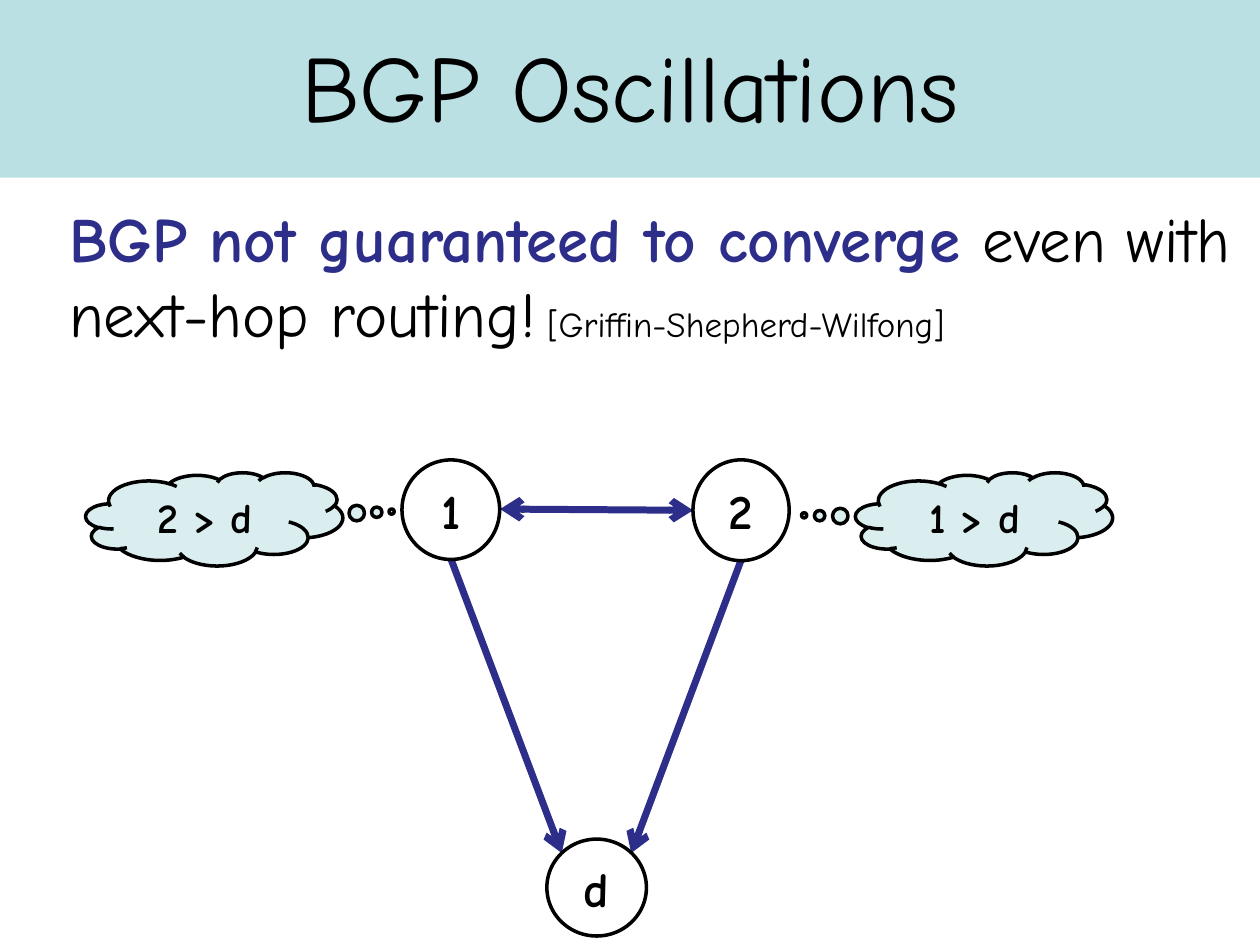
"""Build the BGP Oscillations slide: two nodes that prefer each other over d."""
import pptx
import pptx.chart.data
import pptx.dml.color
import pptx.enum.shapes
import pptx.enum.text
import pptx.oxml
import pptx.util

Pt = pptx.util.Pt
SHAPE = pptx.enum.shapes.MSO_SHAPE
ALIGN = pptx.enum.text.PP_ALIGN
ANCHOR = pptx.enum.text.MSO_ANCHOR
BLACK, WHITE, NAVY, TEAL, PALE = "000000", "FFFFFF", "2D2D8A", "BBE0E3", "DAEDEF"


def color(value):
    return pptx.dml.color.RGBColor.from_string(value)


def write(holder, text, size=28, ink=BLACK, bold=False, align=ALIGN.CENTER, anchor=ANCHOR.MIDDLE):
    frame = holder.text_frame
    frame.word_wrap = True
    frame.vertical_anchor = anchor
    paragraph = frame.paragraphs[0]
    paragraph.alignment = align
    run = paragraph.add_run()
    run.text = text
    run.font.name = "Comic Neue"
    run.font.size = Pt(size)
    run.font.bold = bold
    run.font.color.rgb = color(ink)


deck = pptx.Presentation()
deck.slide_width, deck.slide_height = Pt(720), Pt(540)
slide = deck.slides.add_slide(deck.slide_layouts[6])
shapes = slide.shapes

banner = shapes.add_shape(SHAPE.RECTANGLE, 0, 0, Pt(720), Pt(101.5))
banner.shadow.inherit = False
banner.fill.solid()
banner.fill.fore_color.rgb = color(TEAL)
banner.line.fill.background()

title = shapes.add_textbox(Pt(36), Pt(3.6), Pt(648), Pt(90))
write(title, "BGP Oscillations", size=54)

claim = shapes.add_textbox(Pt(32.4), Pt(110.2), Pt(678.2), Pt(230.4))
for text, size, ink, bold in [
    ("BGP not guaranteed to converge ", 36, NAVY, True),
    ("even with next-hop routing!", 36, BLACK, False),
    (" [Griffin-Shepherd-Wilfong]", 20, BLACK, False),
]:
    write(claim, text, size=size, ink=ink, bold=bold, align=ALIGN.LEFT, anchor=ANCHOR.TOP)
claim.text_frame.paragraphs[0].space_before = Pt(7.2)

routes = [
    ((321, 487.5), (257.8, 319.7), ["headEnd"]),
    ((360.7, 487.5), (423.4, 320.4), ["headEnd"]),
    ((396, 291.6), (285.8, 290.9), ["headEnd", "tailEnd"]),
]
for ink, width in [(BLACK, 1), (NAVY, 4)]:
    for start, end, arrowheads in routes:
        route = shapes.add_connector(
            pptx.enum.shapes.MSO_CONNECTOR.STRAIGHT, *map(Pt, start + end))
        route.line.color.rgb = color(ink)
        route.line.width = Pt(width)
        properties = route.line._get_or_add_ln()
        if ink == NAVY:
            for arrowhead in arrowheads:
                pptx.oxml.xmlchemy.OxmlElement
                end_mark = properties.makeelement(pptx.oxml.ns.qn("a:" + arrowhead), {"type": "arrow"})
                properties.append(end_mark)
        effects = properties.makeelement(pptx.oxml.ns.qn("a:effectLst"), {})
        properties.getparent().append(effects)

nodes_and_thoughts = [
    (SHAPE.OVAL, "1", (229.7, 262.8, 55.8, 56.9), WHITE, 28, ()),
    (SHAPE.OVAL, "2", (396, 262.8, 55, 57.6), WHITE, 28, ()),
    (SHAPE.OVAL, "d", (312.5, 479.5, 56.9, 55.4), WHITE, 28, ()),
    (SHAPE.CLOUD_CALLOUT, "2 > d", (49, 270, 146.9, 53.3), PALE, 24, (0.69, -0.08)),
    (SHAPE.CLOUD_CALLOUT, "1 > d", (488.9, 270, 146.9, 53.3), PALE, 24, (-0.7, -0.04)),
]
for outline, label, box, fill, size, pointer in nodes_and_thoughts:
    bubble = shapes.add_shape(outline, *map(Pt, box))
    bubble.shadow.inherit = False
    bubble.fill.solid()
    bubble.fill.fore_color.rgb = color(fill)
    bubble.line.color.rgb = color(BLACK)
    bubble.line.width = Pt(2)
    for index, offset in enumerate(pointer):
        bubble.adjustments[index] = offset
    write(bubble, label, size=size, bold=True)

deck.save("out.pptx")
